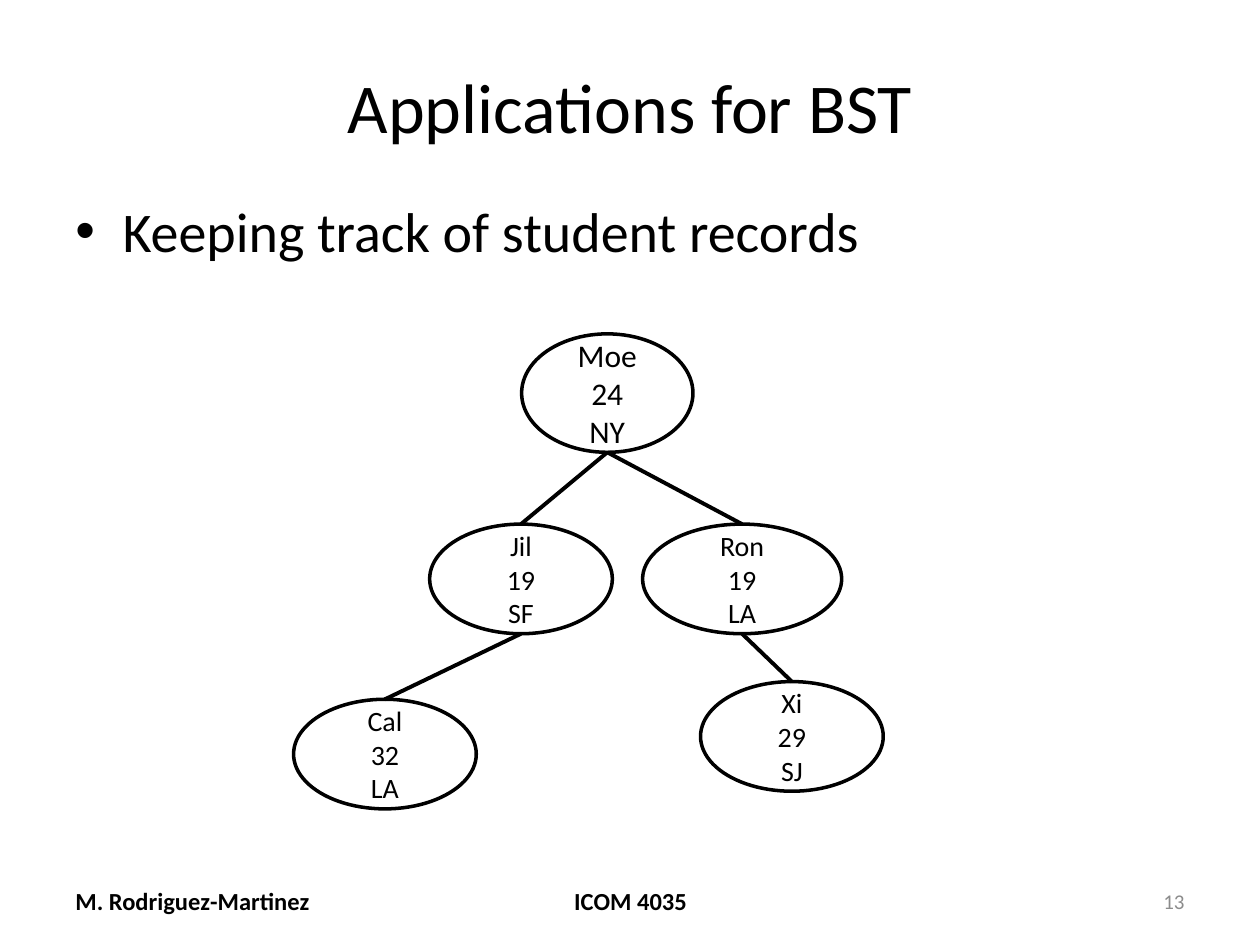
"""Build the slide on a binary search tree of student records."""
import pptx
import pptx.dml.color
import pptx.enum.shapes
import pptx.enum.text
import pptx.util
import lxml.etree

Pt = pptx.util.Pt
Align = pptx.enum.text.PP_ALIGN
Anchor = pptx.enum.text.MSO_ANCHOR
BLACK = pptx.dml.color.RGBColor(0x00, 0x00, 0x00)
WHITE = pptx.dml.color.RGBColor(0xFF, 0xFF, 0xFF)
GREY = pptx.dml.color.RGBColor(0x8C, 0x8C, 0x8C)

deck = pptx.Presentation()
deck.slide_width = pptx.util.Inches(10)
deck.slide_height = pptx.util.Inches(7.5)
COL = deck.slide_width / 100
ROW = deck.slide_height / 75
slide = deck.slides.add_slide(deck.slide_layouts[6])


def grid(*cells):
    """Turn column and row pairs into slide lengths."""
    return [round(cell * unit) for cell, unit in zip(cells, (COL, ROW) * 2)]


def write(shape, lines, size, align, anchor=Anchor.MIDDLE, color=BLACK, bold=False):
    """Fill a shape with one run per line."""
    frame = shape.text_frame
    frame.word_wrap = True
    frame.vertical_anchor = anchor
    for spot, line in enumerate(lines):
        para = frame.add_paragraph() if spot else frame.paragraphs[0]
        para.alignment = align
        run = para.add_run()
        run.text = line
        run.font.name = "Calibri"
        run.font.size = Pt(size)
        run.font.bold = bold
        run.font.color.rgb = color
    return frame


title = slide.shapes.add_textbox(*grid(5, 3, 90, 10.7))
write(title, ["Applications for BST"], 40, Align.CENTER)

body = slide.shapes.add_textbox(*grid(5, 15.1, 90, 51.9))
frame = write(body, ["Keeping track of student records"], 32, Align.LEFT, Anchor.TOP)
para = frame.paragraphs[0]
para.space_before = Pt(6.4)
props = para._p.get_or_add_pPr()
dent = round(3.75 * COL)
props.set("marL", str(dent))
props.set("indent", str(-dent))
space = "{http://schemas.openxmlformats.org/drawingml/2006/main}"
lxml.etree.SubElement(props, space + "buFont").set("typeface", "Arial")
lxml.etree.SubElement(props, space + "buChar").set("char", "•")

feet = [
    ("M. Rodriguez-Martinez", 5, 23.3, 14, Align.LEFT, BLACK, True),
    ("ICOM 4035", 34.2, 31.7, 14, Align.CENTER, BLACK, True),
    ("13", 71.7, 23.3, 12, Align.RIGHT, GREY, False),
]
for text, left, width, size, align, color, bold in feet:
    foot = slide.shapes.add_textbox(*grid(left, 69.5, width, 4))
    write(foot, [text], size, align, color=color, bold=bold)

nodes = {
    "Moe": ("24", "NY", 41.4, 26.5, 13.6, 9.4, 18),
    "Jil": ("19", "SF", 34.1, 41.6, 14.5, 8.7, 16),
    "Ron": ("19", "LA", 51, 41.6, 15.8, 8.7, 16),
    "Cal": ("32", "LA", 23.3, 55.5, 14.5, 8.7, 16),
    "Xi": ("29", "SJ", 55.6, 54.1, 14.5, 8.7, 16),
}
ovals = {}
for name, (age, town, left, top, width, height, size) in nodes.items():
    oval = slide.shapes.add_shape(
        pptx.enum.shapes.MSO_SHAPE.OVAL, *grid(left, top, width, height))
    oval.shadow.inherit = False
    oval.fill.solid()
    oval.fill.fore_color.rgb = WHITE
    oval.line.color.rgb = BLACK
    oval.line.width = Pt(2)
    write(oval, [name, age, town], size, Align.CENTER)
    ovals[name] = oval

for head, child in [("Moe", "Jil"), ("Moe", "Ron"), ("Jil", "Cal"), ("Ron", "Xi")]:
    start, end = ovals[head], ovals[child]
    edge = slide.shapes.add_connector(
        pptx.enum.shapes.MSO_CONNECTOR.STRAIGHT,
        start.left + start.width // 2, start.top + start.height,
        end.left + end.width // 2, end.top)
    edge.line.color.rgb = BLACK
    edge.line.width = Pt(2.25)
    lxml.etree.SubElement(edge._element.spPr, space + "effectLst")

deck.save("out.pptx")
